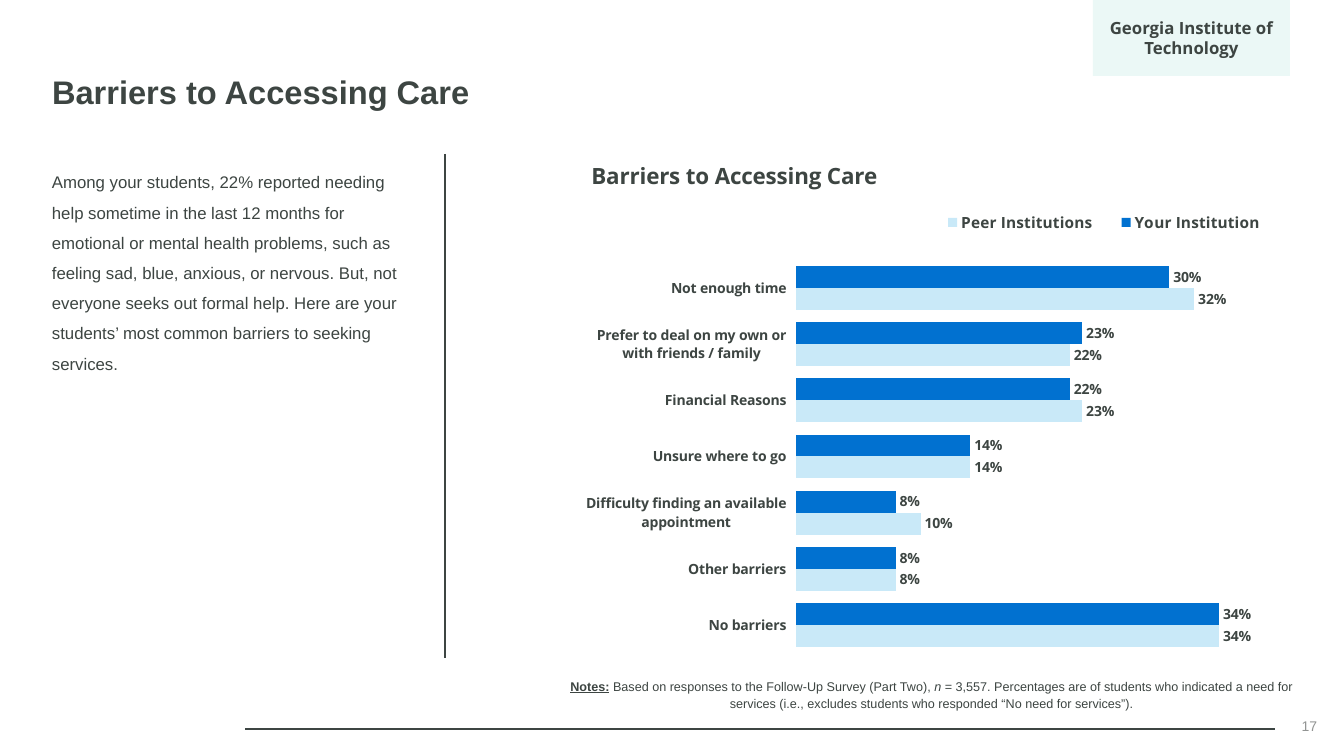
from lxml.etree import SubElement
from pptx import Presentation
from pptx.chart.data import CategoryChartData
from pptx.dml.color import RGBColor
from pptx.enum.chart import XL_CHART_TYPE, XL_LABEL_POSITION, XL_LEGEND_POSITION, XL_TICK_MARK
from pptx.enum.shapes import MSO_CONNECTOR, MSO_SHAPE
from pptx.enum.text import MSO_ANCHOR, PP_ALIGN
from pptx.oxml import parse_xml
from pptx.oxml.ns import nsdecls, qn
from pptx.util import Emu, Pt

SCALE = 914400 / 100.8
INK = "3D4542"
BODY_FONT = "Arial"
CHART_FONT = "Open Sans"
BARRIERS = [
    ("Not enough time", 0.30, 0.32),
    ("Prefer to deal on my own or with friends / family", 0.23, 0.22),
    ("Financial Reasons", 0.22, 0.23),
    ("Unsure where to go", 0.14, 0.14),
    ("Difficulty finding an available appointment", 0.08, 0.10),
    ("Other barriers", 0.08, 0.08),
    ("No barriers", 0.34, 0.34),
]
SERIES = [("Your Institution", "0171D0"), ("Peer Institutions", "C9E9F8")]


def px(length):
    return Emu(round(length * SCALE))


def color(value):
    return RGBColor.from_string(value)


def style_font(font, size, name=BODY_FONT, bold=False, ink=INK):
    font.size = Pt(size)
    font.name = name
    font.bold = bold
    font.color.rgb = color(ink)


def add_span(para, text, size, **style):
    span = para.add_run()
    span.text = text
    style_font(span.font, size, **style)
    return span


def add_text_box(page, box, anchor=MSO_ANCHOR.MIDDLE):
    frame = page.shapes.add_textbox(*map(px, box)).text_frame
    frame.word_wrap = True
    frame.vertical_anchor = anchor
    return frame.paragraphs[0]


def add_line(page, start, end, ink, width):
    line = page.shapes.add_connector(MSO_CONNECTOR.STRAIGHT, *map(px, start + end))
    line.line.color.rgb = color(ink)
    line.line.width = Pt(width)
    SubElement(line.element.spPr, qn("a:effectLst"))


def add_title(page, box):
    title = page.shapes.title
    title.left, title.top, title.width, title.height = map(px, box)
    frame = title.text_frame
    frame.vertical_anchor = MSO_ANCHOR.TOP
    frame.margin_top = 0
    para = frame.paragraphs[0]
    para.alignment = PP_ALIGN.LEFT
    para.line_spacing = 0.9
    add_span(para, "Barriers to Accessing Care", 23.3, bold=True)


def add_school_tag(page, box):
    tag = page.shapes.add_shape(MSO_SHAPE.RECTANGLE, *map(px, box))
    tag.shadow.inherit = False
    tag.line.fill.background()
    tag.fill.solid()
    tag.fill.fore_color.rgb = color("3CC0AF")
    tint = tag.element.spPr.find(".//" + qn("a:srgbClr"))
    SubElement(tint, qn("a:alpha")).set("val", "10000")
    frame = tag.text_frame
    frame.word_wrap = True
    frame.vertical_anchor = MSO_ANCHOR.MIDDLE
    frame.margin_top = frame.margin_bottom = 0
    para = frame.paragraphs[0]
    para.alignment = PP_ALIGN.CENTER
    add_span(para, "Georgia Institute of Technology", 12, name=CHART_FONT, bold=True)


def add_summary(page, box):
    left, top, width, height = box
    para = add_text_box(page, box, MSO_ANCHOR.TOP)
    para.line_spacing = 1.5
    para.space_after = Pt(2)
    add_span(para, "Among your students, 22% reported needing help sometime in the last 12 months "
             "for emotional or mental health problems, such as feeling sad, blue, anxious, or "
             "nervous. But, not everyone seeks out formal help. Here are your students’ most "
             "common barriers to seeking services.", 12)
    divider = left + width + 33
    add_line(page, (divider, top - 3), (divider, top + 501), INK, 1)


def place_part(chart, tag, index, spot, inner=False):
    holder = chart.element.find(".//" + qn(tag))
    old = holder.find(qn("c:layout"))
    if old is not None:
        holder.remove(old)
    target = '<c:layoutTarget val="inner"/>' if inner else ""
    modes = '<c:xMode val="edge"/><c:yMode val="edge"/>'
    sizes = "".join(f'<c:{key} val="{value}"/>' for key, value in zip("xywh", spot))
    holder.insert(index, parse_xml(
        f'<c:layout {nsdecls("c")}><c:manualLayout>{target}{modes}{sizes}'
        '</c:manualLayout></c:layout>'))


def add_barrier_chart(page, box):
    names, *columns = zip(*BARRIERS)
    data = CategoryChartData(number_format="0%")
    data.categories = names
    for (name, _), values in zip(SERIES, columns):
        data.add_series(name, values)
    chart = page.shapes.add_chart(XL_CHART_TYPE.BAR_CLUSTERED, *map(px, box), data).chart
    style_font(chart.font, 8, name=CHART_FONT)

    chart.has_title = True
    add_span(chart.chart_title.text_frame.paragraphs[0], "Barriers to Accessing Care", 16,
             name=CHART_FONT, bold=True)
    chart.has_legend = True
    chart.legend.position = XL_LEGEND_POSITION.TOP
    chart.legend.include_in_layout = False
    style_font(chart.legend.font, 11, name=CHART_FONT, bold=True)

    categories = chart.category_axis
    categories.reverse_order = True
    categories.major_tick_mark = XL_TICK_MARK.OUTSIDE
    categories.format.line.fill.background()
    style_font(categories.tick_labels.font, 10, name=CHART_FONT, bold=True)
    values = chart.value_axis
    values.visible = False
    values.has_major_gridlines = False
    values.minimum_scale = 0
    values.maximum_scale = 0.4

    plot = chart.plots[0]
    plot.gap_width = 56
    plot.overlap = 0
    plot.vary_by_categories = False
    for series, (_, fill) in zip(plot.series, SERIES):
        series.format.fill.solid()
        series.format.fill.fore_color.rgb = color(fill)
        labels = series.data_labels
        labels.show_value = True
        labels.position = XL_LABEL_POSITION.OUTSIDE_END
        labels.number_format = "0%"
        labels.number_format_is_linked = False
        style_font(labels.font, 10, name=CHART_FONT, bold=True)

    place_part(chart, "c:title", 1, (0.01, 0.01))
    place_part(chart, "c:legend", 1, (0.47, 0.11, 0.49, 0.06))
    place_part(chart, "c:plotArea", 0, (0.295, 0.212, 0.679, 0.75), inner=True)


def add_notes(page, box):
    para = add_text_box(page, box)
    para.alignment = PP_ALIGN.CENTER
    para.line_spacing = Pt(12)
    para.space_after = Pt(2)
    add_span(para, "Notes:", 9, bold=True).font.underline = True
    add_span(para, " Based on responses to the Follow-Up Survey (Part Two)", 9)
    add_span(para, ", ", 9, ink="3C4543")
    add_span(para, "n", 9, ink="3C4543").font.italic = True
    add_span(para, " = 3,557", 9, ink="3C4543")
    add_span(para, ". Percentages are of students who indicated a need for services "
             "(i.e., excludes students who responded “No need for services”).", 9)


def add_footer(page, box):
    left, top, width, height = box
    add_line(page, (left + 1030, top + 23), (left, top + 23), "3D4543", 1.5)
    para = add_text_box(page, (left + width - 302, top, 302, height))
    para.alignment = PP_ALIGN.RIGHT
    add_span(para, "17", 10, ink="929493")


def main():
    deck = Presentation()
    deck.slide_width, deck.slide_height = px(1344), px(756)
    page = deck.slides.add_slide(deck.slide_layouts[5])
    add_footer(page, (245, 706, 1082, 40))
    add_title(page, (42, 76, 1157, 71))
    add_notes(page, (551, 678, 761, 32))
    add_barrier_chart(page, (580, 149, 733, 524))
    add_summary(page, (42, 157, 370, 307))
    add_school_tag(page, (1093, 0, 197, 76))
    deck.save("out.pptx")


if __name__ == "__main__":
    main()
